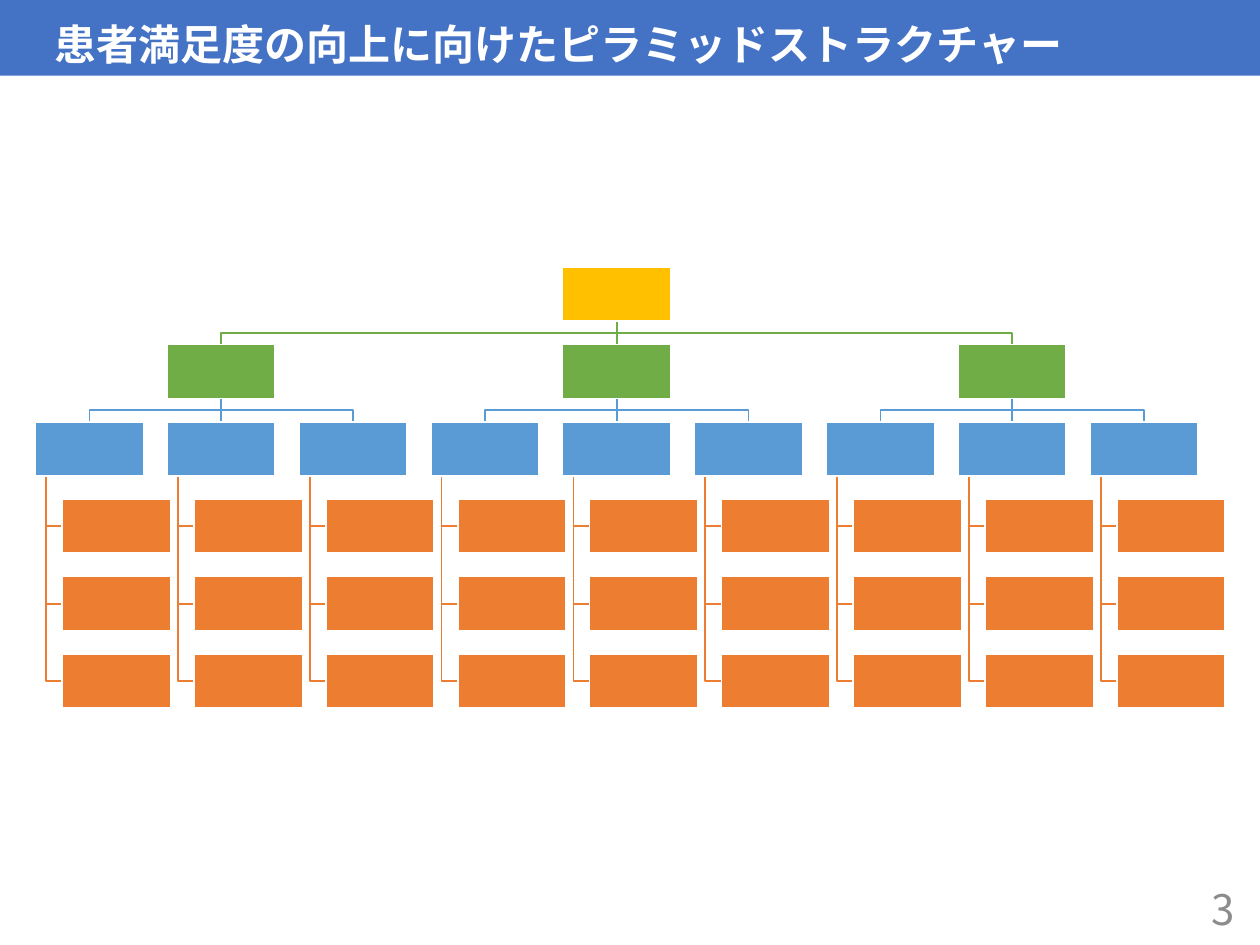
from lxml import etree
from pptx import Presentation
from pptx.dml.color import RGBColor
from pptx.enum.shapes import MSO_CONNECTOR, MSO_SHAPE
from pptx.enum.text import MSO_ANCHOR, PP_ALIGN
from pptx.oxml.ns import qn
from pptx.util import Inches, Pt

RECTANGLE, STRAIGHT = MSO_SHAPE.RECTANGLE, MSO_CONNECTOR.STRAIGHT
LEFT, RIGHT = PP_ALIGN.LEFT, PP_ALIGN.RIGHT
BOTTOM, MIDDLE = MSO_ANCHOR.BOTTOM, MSO_ANCHOR.MIDDLE
TOP_SIDE, BOTTOM_SIDE = 0, 2

THEME = {
    "font": "Noto Sans CJK JP",
    "text_size": Pt(24),
    "line_width": Pt(1),
    "banner": RGBColor.from_string("4472C4"),
    "white": RGBColor.from_string("FFFFFF"),
    "page_number": RGBColor.from_string("8C8C8C"),
    "goal": RGBColor.from_string("FFC000"),
    "pillar": RGBColor.from_string("70AD47"),
    "theme": RGBColor.from_string("5B9BD5"),
    "action": RGBColor.from_string("ED7D31"),
}

presentation = Presentation()
presentation.slide_width, presentation.slide_height = Inches(10), Inches(7.5)
slide = presentation.slides.add_slide(presentation.slide_layouts[6])
shapes = slide.shapes

# Grid of the tree: nine columns and six rows with equal pitch
GRID_LEFT, GRID_TOP = Inches(0.28), Inches(2.12)
COLUMNS, ROWS = 9, 6
COLUMN_PITCH = Inches(8.37) / (COLUMNS - 1)
ROW_PITCH = Inches(3.07) / (ROWS - 1)
BOX_WIDTH, BOX_HEIGHT = Inches(0.86), Inches(0.43)
ACTION_INDENT, SPINE_INDENT = BOX_WIDTH / 4, BOX_WIDTH / 10
ACTION_ROWS = range(3, ROWS)


def write_text(shape, text, color, anchor, paragraph_format, bold=False):
    frame = shape.text_frame
    frame.word_wrap = True
    frame.vertical_anchor = anchor
    paragraph = frame.paragraphs[0]
    for name, value in paragraph_format.items():
        setattr(paragraph, name, value)
    run = paragraph.add_run()
    run.text = text
    font_format = {"name": THEME["font"], "size": THEME["text_size"], "bold": bold}
    for name, value in font_format.items():
        setattr(run.font, name, value)
    run.font.color.rgb = color
    east_asian = etree.SubElement(run.font._element, qn("a:ea"))
    east_asian.set("typeface", THEME["font"])


def add_line(points, color):
    """Draw a straight connector through two points, a bent outline through more."""
    points = [(int(x), int(y)) for x, y in points]
    if len(points) == 2:
        line = shapes.add_connector(STRAIGHT, *points[0], *points[1])
        etree.SubElement(line._element.spPr, qn("a:effectLst"))
    else:
        builder = shapes.build_freeform(*points[0], scale=1.0)
        builder.add_line_segments(points[1:], close=False)
        line = builder.convert_to_shape()
        line.fill.background()
        line.shadow.inherit = False
    line.line.color.rgb = color
    line.line.width = THEME["line_width"]
    return line


# Title banner and page number
banner = shapes.add_shape(RECTANGLE, 0, 0, presentation.slide_width, Inches(0.6))
banner.shadow.inherit = False
banner.fill.solid()
banner.fill.fore_color.rgb = THEME["banner"]
banner.line.fill.background()
banner.text_frame.margin_left = Inches(0.1) + THEME["text_size"]
write_text(banner, "患者満足度の向上に向けたピラミッドストラクチャー", THEME["white"], BOTTOM,
           {"alignment": LEFT, "line_spacing": 0.9}, bold=True)

page_number = shapes.add_textbox(Inches(7.65), Inches(7.01), Inches(2.25), Inches(0.4))
write_text(page_number, "3", THEME["page_number"], MIDDLE, {"alignment": RIGHT})

# Each node is (row, column); each branch joins a parent to a child
nodes = {(0, 4): "goal"}
branches = []
for pillar_column in (1, 4, 7):
    nodes[1, pillar_column] = "pillar"
    branches.append(((0, 4), (1, pillar_column)))
    for column in range(pillar_column - 1, pillar_column + 2):
        nodes[2, column] = "theme"
        branches.append(((1, pillar_column), (2, column)))
        for row in ACTION_ROWS:
            nodes[row, column] = "action"
            branches.append(((2, column), (row, column)))

# Lines go first so that the boxes lie in front of them
straight_branches = []
for parent, child in branches:
    (parent_row, parent_column), (child_row, child_column) = parent, child
    parent_left = GRID_LEFT + parent_column * COLUMN_PITCH
    parent_bottom = GRID_TOP + parent_row * ROW_PITCH + BOX_HEIGHT
    child_top = GRID_TOP + child_row * ROW_PITCH
    parent_middle = parent_left + BOX_WIDTH / 2
    color = THEME[nodes[child]]
    if nodes[child] == "action":
        spine = parent_left + SPINE_INDENT
        child_middle = child_top + BOX_HEIGHT / 2
        add_line([(spine, parent_bottom), (spine, child_middle),
                  (parent_left + ACTION_INDENT, child_middle)], color)
    elif parent_column == child_column:
        line = add_line([(parent_middle, parent_bottom), (parent_middle, child_top)], color)
        straight_branches.append((line, parent, child))
    else:
        child_center = GRID_LEFT + child_column * COLUMN_PITCH + BOX_WIDTH / 2
        bend = (parent_bottom + child_top) / 2
        add_line([(parent_middle, parent_bottom), (parent_middle, bend),
                  (child_center, bend), (child_center, child_top)], color)

boxes = {}
for (row, column), level in nodes.items():
    indent = ACTION_INDENT if level == "action" else 0
    box = shapes.add_shape(RECTANGLE, int(GRID_LEFT + column * COLUMN_PITCH + indent),
                           int(GRID_TOP + row * ROW_PITCH), BOX_WIDTH, BOX_HEIGHT)
    box.shadow.inherit = False
    box.fill.solid()
    box.fill.fore_color.rgb = THEME[level]
    box.line.color.rgb = THEME["white"]
    box.line.width = THEME["line_width"]
    boxes[row, column] = box

for line, parent, child in straight_branches:
    line.begin_connect(boxes[parent], BOTTOM_SIDE)
    line.end_connect(boxes[child], TOP_SIDE)

presentation.save("out.pptx")
